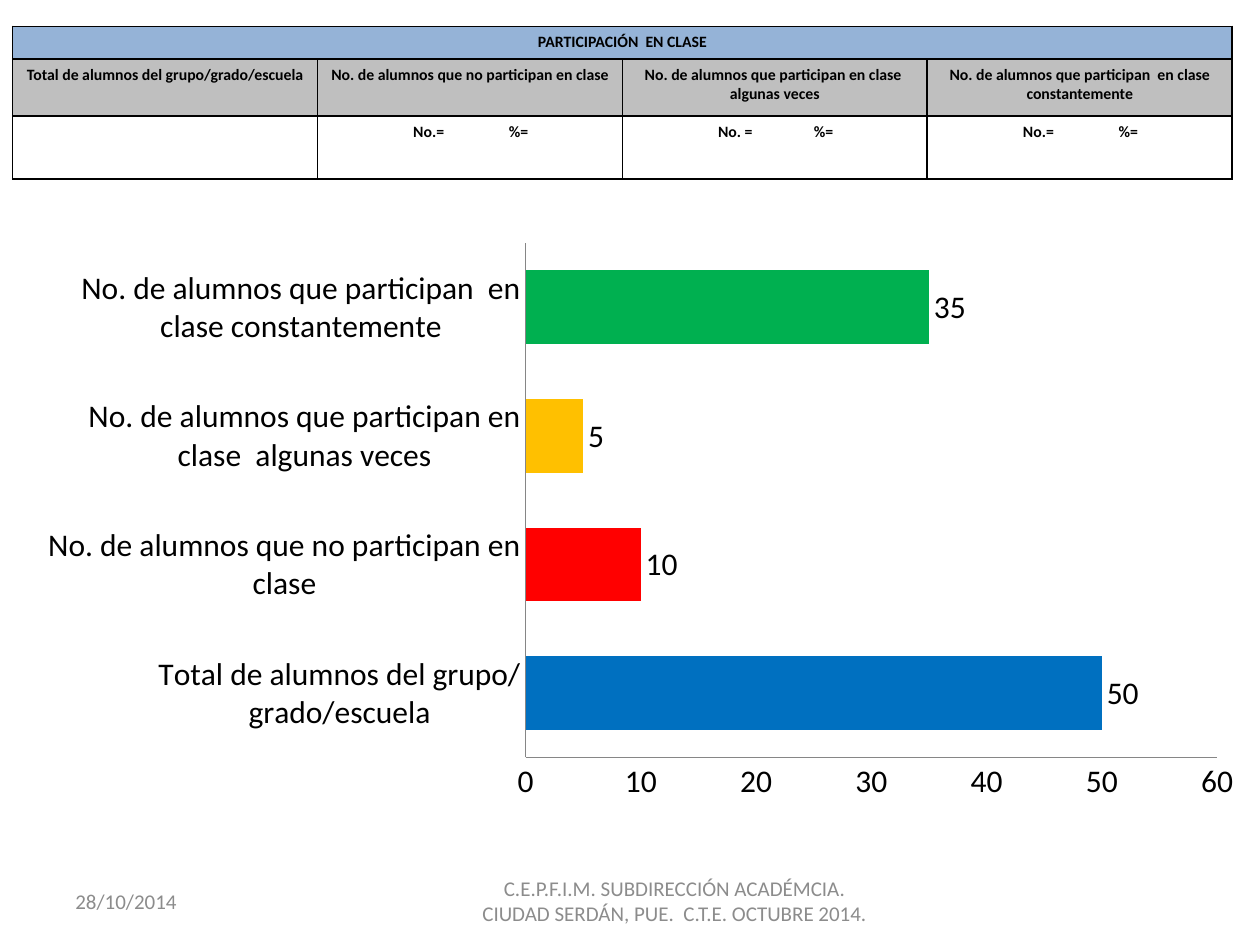
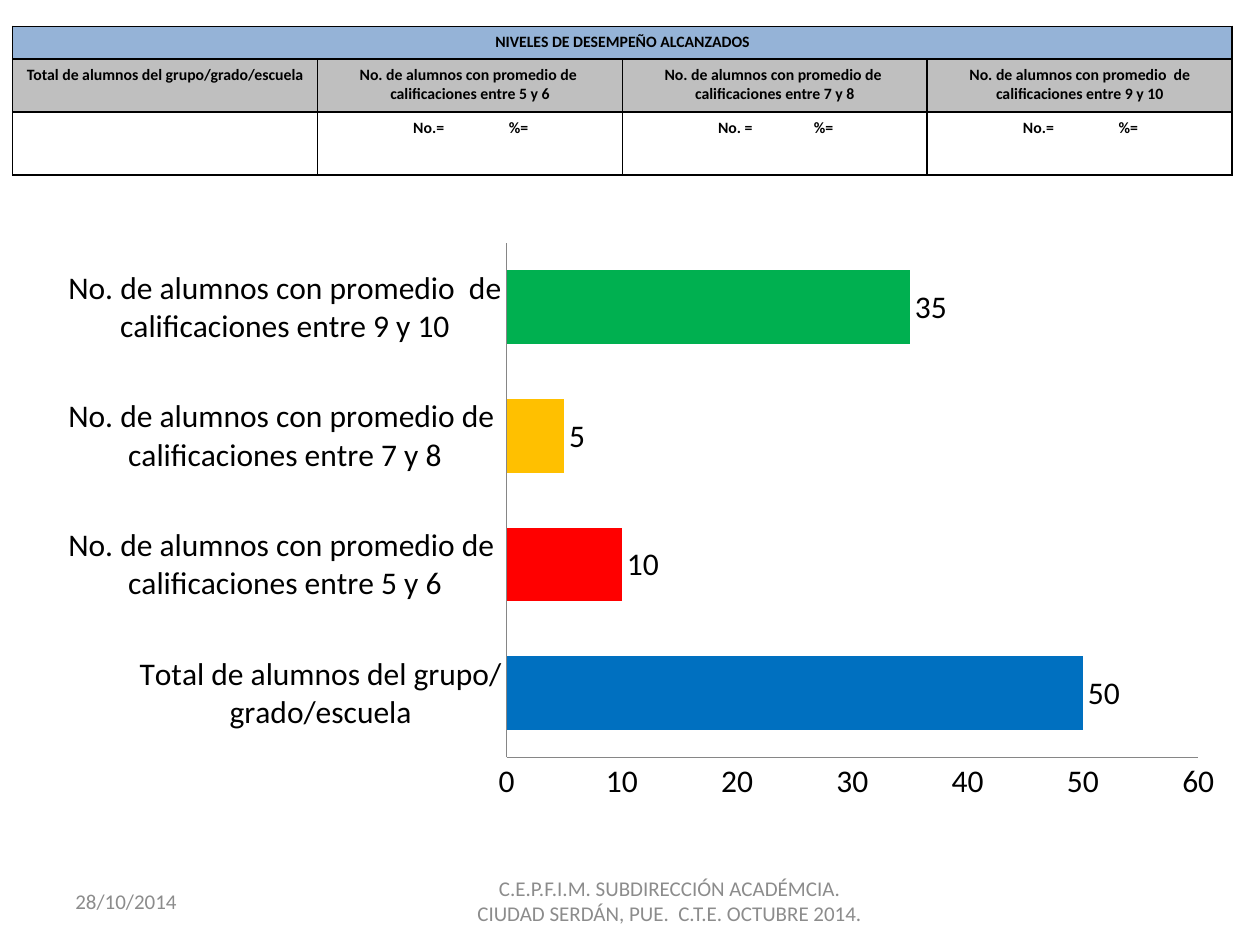
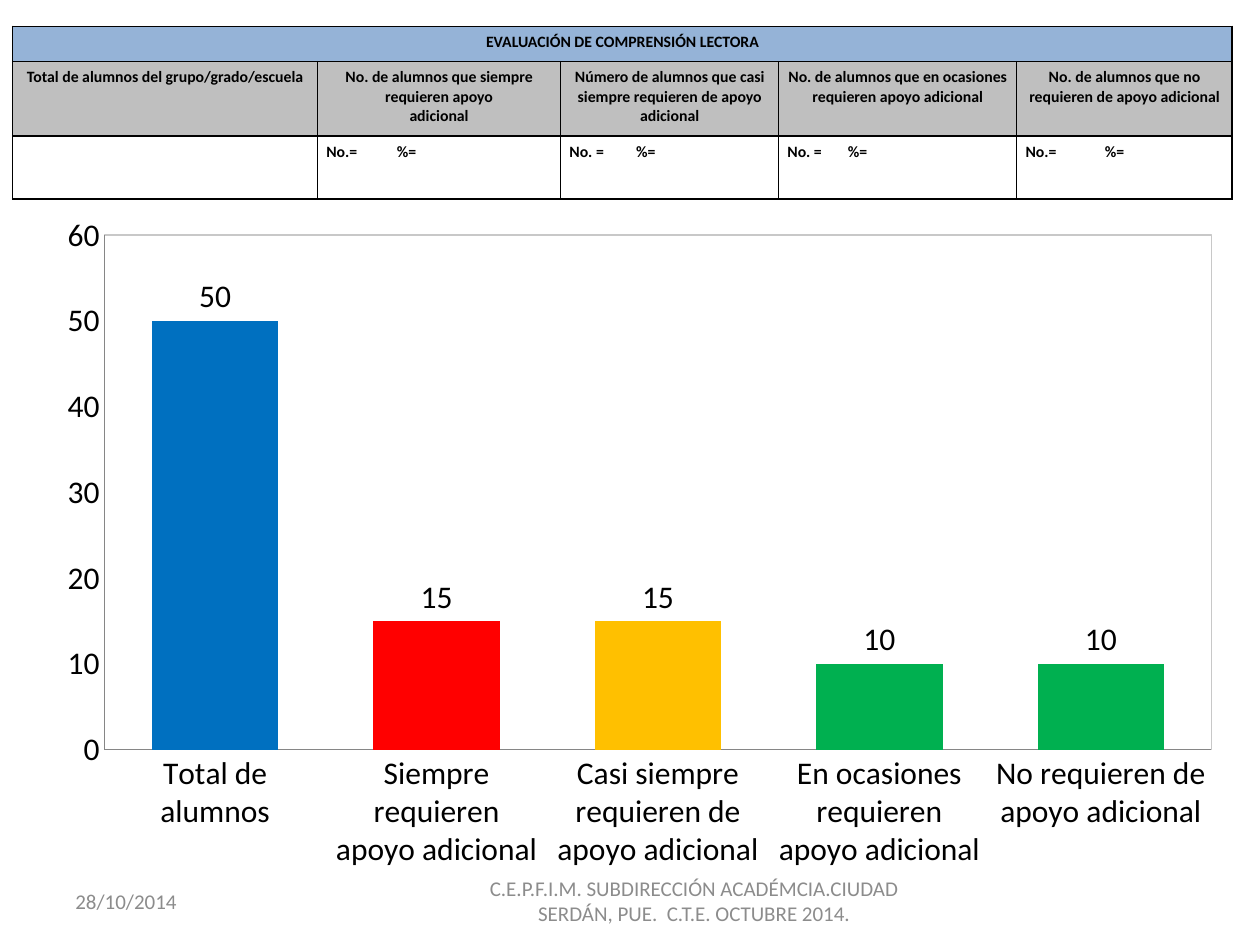
from dataclasses import dataclass

from pptx import Presentation
from pptx.chart.data import CategoryChartData
from pptx.dml.color import RGBColor
from pptx.enum.chart import XL_CHART_TYPE, XL_LABEL_POSITION, XL_TICK_MARK
from pptx.enum.text import MSO_ANCHOR, PP_ALIGN
from pptx.oxml import parse_xml
from pptx.oxml.ns import nsdecls
from pptx.util import Inches, Pt


@dataclass(frozen=True)
class Theme:
    font: str = "Calibri"
    ink: str = "000000"
    muted: str = "8C8C8C"
    band: str = "95B3D7"
    head: str = "BFBFBF"
    axis: str = "868686"
    frame: str = "C8C8C8"
    bars: tuple = ("0070C0", "FF0000", "FFC000", "00B050", "00B050")
    cell: int = 9
    foot: int = 12
    chart: int = 18


THEME = Theme()
TOTAL = "Total de alumnos del grupo/grado/escuela"
MARKS = ("No.=", "No. =", "No.=")
STOPS = ((0.69, 1.45),) * 3
FOOT = ("C.E.P.F.I.M. SUBDIRECCIÓN ACADÉMCIA.",
        "CIUDAD SERDÁN, PUE.  C.T.E. OCTUBRE 2014.")


# Shared helpers
def apply(obj, **vals):
    for name, val in vals.items():
        setattr(obj, name, val)


def style(font, size, color, bold=False):
    apply(font, name=THEME.font, size=Pt(size), bold=bold)
    font.color.rgb = RGBColor.from_string(color)


def write(frame, lines, size, color, align, bold=False):
    for i, line in enumerate(lines):
        para = frame.add_paragraph() if i else frame.paragraphs[0]
        para.alignment = align
        run = para.add_run()
        run.text = line
        style(run.font, size, color, bold)


def set_tabs(para, stops):
    tabs = "".join(f'<a:tab pos="{Inches(x)}" algn="l"/>' for x in stops)
    para._p.get_or_add_pPr().append(
        parse_xml(f'<a:tabLst {nsdecls("a")}>{tabs}</a:tabLst>'))


# Table: title band, headings, and a row to fill in
def paint(cell, fill=None):
    pad = {f"margin_{side}": Inches(0.07) for side in ("left", "right")}
    pad |= {f"margin_{side}": Inches(0.05) for side in ("top", "bottom")}
    apply(cell, **pad)
    props = cell._tc.get_or_add_tcPr()
    for side in "LRTB":
        props.append(parse_xml(
            f'<a:ln{side} {nsdecls("a")} w="{Pt(1)}"><a:solidFill>'
            f'<a:srgbClr val="{THEME.ink}"/></a:solidFill></a:ln{side}>'))
    if fill:
        cell.fill.solid()
        cell.fill.fore_color.rgb = RGBColor.from_string(fill)
    else:
        cell.fill.background()


def add_grid(slide, box, title, heads, cols, rows, marks, stops):
    shape = slide.shapes.add_table(3, len(cols), *map(Inches, box))
    table = shape.table
    apply(table, first_row=False, horz_banding=False)
    for col, width in zip(table.columns, cols):
        col.width = Inches(width)
    fills = (THEME.band, THEME.head, None)
    for r, (row, height, fill) in enumerate(zip(table.rows, rows, fills)):
        row.height = Inches(height)
        for c in range(len(cols)):
            paint(table.cell(r, c), fill)

    def put(r, c, text, align=PP_ALIGN.CENTER):
        frame = table.cell(r, c).text_frame
        write(frame, text.split("\n"), THEME.cell, THEME.ink, align, True)
        return frame.paragraphs[0]

    table.cell(0, 0).merge(table.cell(0, len(cols) - 1))
    put(0, 0, title)
    for c, head in enumerate(heads):
        put(1, c, head)
    for c, (mark, spots) in enumerate(zip(marks, stops), 1):
        lead = "\t" * (len(spots) - 1)
        set_tabs(put(2, c, f"{lead}{mark}\t%=", PP_ALIGN.LEFT), spots)


# Chart: one series, one colour per bar
def add_bars(slide, box, kind, names, vals, plot, framed):
    data = CategoryChartData()
    data.categories = names
    data.add_series("Series 1", vals)
    chart = slide.shapes.add_chart(kind, *map(Inches, box), data).chart
    apply(chart, has_legend=False, has_title=False)
    style(chart.font, THEME.chart, THEME.ink)

    apply(chart.value_axis, minimum_scale=0, maximum_scale=60, major_unit=10)
    for axis in (chart.category_axis, chart.value_axis):
        apply(axis, has_major_gridlines=False,
              major_tick_mark=XL_TICK_MARK.NONE,
              minor_tick_mark=XL_TICK_MARK.NONE)
        axis.format.line.color.rgb = RGBColor.from_string(THEME.axis)
        axis.format.line.width = Pt(0.75)

    bars = chart.plots[0]
    apply(bars, gap_width=75, vary_by_categories=False, has_data_labels=True)
    apply(bars.data_labels, show_value=True,
          position=XL_LABEL_POSITION.OUTSIDE_END)
    for i in range(len(vals)):
        fill = bars.series[0].points[i].format.fill
        fill.solid()
        fill.fore_color.rgb = RGBColor.from_string(THEME.bars[i])

    # Fixed plot area
    area = chart.element.xpath("c:chart/c:plotArea")[0]
    for old in area.xpath("c:layout"):
        area.remove(old)
    spots = "".join(f'<c:{k} val="{v}"/>' for k, v in zip("xywh", plot))
    area.insert(0, parse_xml(
        f'<c:layout {nsdecls("c")}><c:manualLayout>'
        '<c:layoutTarget val="inner"/><c:xMode val="edge"/>'
        f'<c:yMode val="edge"/>{spots}</c:manualLayout></c:layout>'))
    line = (f'<a:solidFill><a:srgbClr val="{THEME.frame}"/></a:solidFill>'
            if framed else "<a:noFill/>")
    area.append(parse_xml(
        f'<c:spPr {nsdecls("c", "a")}><a:noFill/>'
        f'<a:ln w="{Pt(0.75)}">{line}</a:ln></c:spPr>'))


# Footer: centre lines and date
def add_foot(slide, box, lines):
    left, top, width, height = box
    parts = ((left, width, lines, PP_ALIGN.CENTER),
             (0.5, 2.33, ("28/10/2014",), PP_ALIGN.LEFT))
    for x, wide, text, align in parts:
        area = slide.shapes.add_textbox(*map(Inches, (x, top, wide, height)))
        apply(area.text_frame, word_wrap=True,
              vertical_anchor=MSO_ANCHOR.MIDDLE)
        write(area.text_frame, text, THEME.foot, THEME.muted, align)


def add_page(deck, title, heads, rows, left, wide, top=1.31, names=None,
             vals=(50, 10, 5, 35), kind=XL_CHART_TYPE.BAR_CLUSTERED,
             plot=(0.401, 0.102, 0.576, 0.674), framed=False,
             cols=(2.42,) * 4, marks=MARKS, stops=STOPS, foot=FOOT):
    slide = deck.slides.add_slide(deck.slide_layouts[6])
    heads = (TOTAL, *heads)
    add_bars(slide, (left, top, 9.53, 6.06), kind, names or heads, vals,
             plot, framed)
    add_foot(slide, (3.42, 6.95, wide, 0.4), foot)
    add_grid(slide, (0.1, 0.21, 9.69, sum(rows)), title, heads, cols, rows,
             marks, stops)


def main():
    deck = Presentation()
    apply(deck, slide_width=Inches(10), slide_height=Inches(7.5))

    # Class participation
    add_page(deck, "PARTICIPACIÓN  EN CLASE",
             ("No. de alumnos que no participan en clase",
              "No. de alumnos que participan en clase  algunas veces",
              "No. de alumnos que participan  en clase constantemente"),
             rows=(0.26, 0.45, 0.5), left=0.35, wide=3.87)

    # Achievement levels
    add_page(deck, "NIVELES DE DESEMPEÑO ALCANZADOS",
             ("No. de alumnos con promedio de  calificaciones entre 5 y 6",
              "No. de alumnos con promedio de  calificaciones entre 7 y 8",
              "No. de alumnos con promedio  de calificaciones entre 9 y 10"),
             rows=(0.26, 0.42, 0.5), left=0.2, wide=3.79)

    # Reading comprehension
    add_page(deck, "EVALUACIÓN DE COMPRENSIÓN LECTORA",
             ("No. de alumnos que siempre requieren apoyo\nadicional",
              "Número de alumnos que casi siempre requieren de apoyo adicional",
              "No. de alumnos que en ocasiones requieren apoyo adicional",
              "No. de alumnos que no requieren de apoyo adicional"),
             rows=(0.28, 0.59, 0.5), left=0.2, wide=4.18, top=1.15,
             names=("Total de alumnos", "Siempre requieren apoyo adicional",
                    "Casi siempre requieren de apoyo adicional",
                    "En ocasiones requieren apoyo adicional",
                    "No requieren de apoyo adicional"),
             vals=(50, 15, 15, 10, 10), kind=XL_CHART_TYPE.COLUMN_CLUSTERED,
             plot=(0.066, 0.118, 0.922, 0.674), framed=True,
             cols=(2.42, 1.93, 1.73, 1.89, 1.71),
             marks=("No.=", "No. =", "No. =", "No.="),
             stops=((0.56,), (0.53,), (0.48,), (0.63,)),
             foot=("C.E.P.F.I.M. SUBDIRECCIÓN ACADÉMCIA.CIUDAD",
                   "SERDÁN, PUE.  C.T.E. OCTUBRE 2014."))
    deck.save("out.pptx")


if __name__ == "__main__":
    main()
